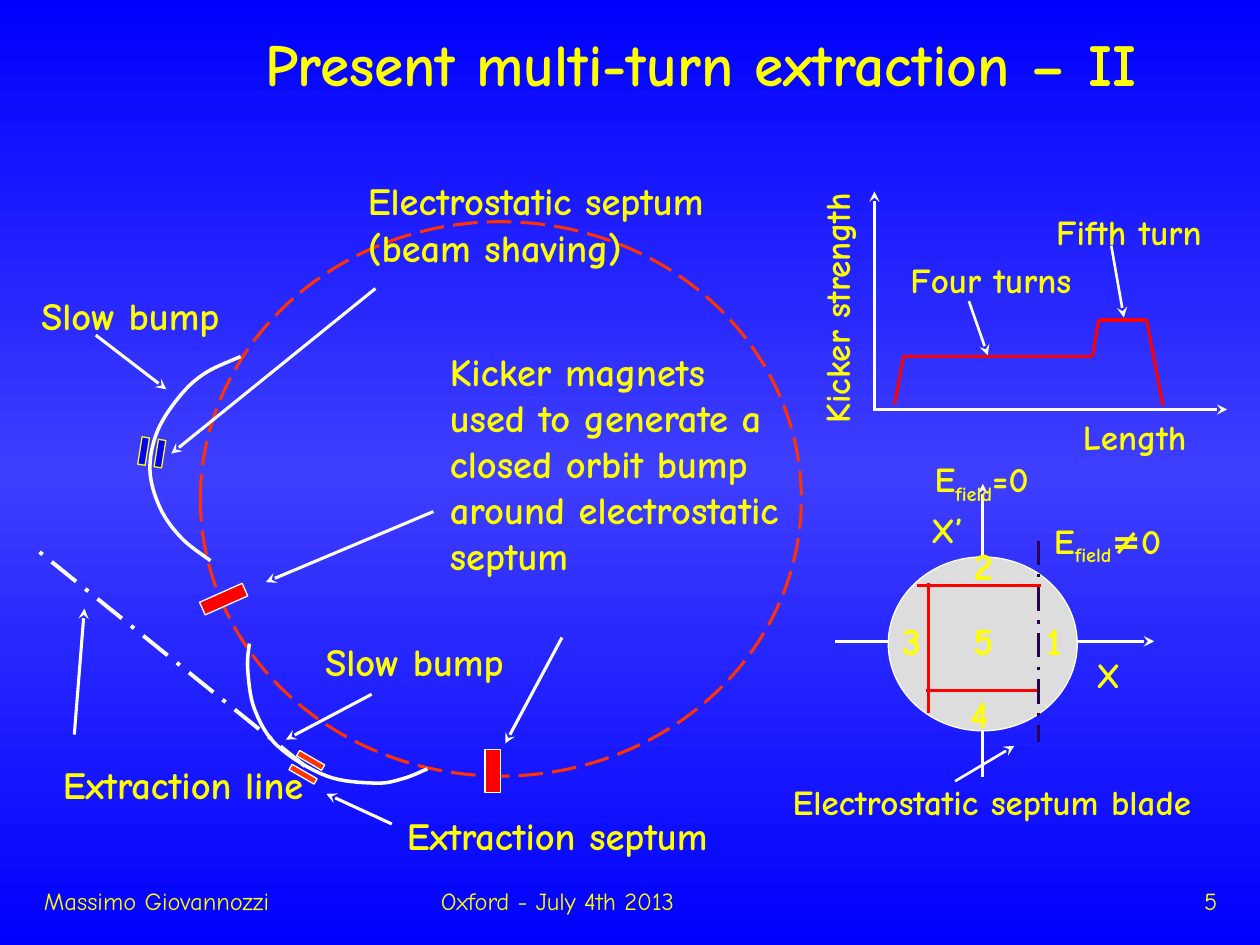
from copy import deepcopy
from itertools import pairwise

from lxml import etree
from pptx import Presentation
from pptx import util as u
from pptx.dml.color import RGBColor
from pptx.enum import dml, shapes, text
from pptx.oxml.ns import qn

THEME = {
    "font": "Comic Neue",
    "text": "FFFF00", "white": "FFFFFF", "red": "FF0000", "ring": "FF3300",
    "blue": "0000FF", "glow": "3E3EFF", "beam": "DDDDDD", "blade": "2A004E",
    "title": 34, "label": 22, "small": 20, "footer": 14,
    "thin": 0.75, "pointer": 1.5, "line": 1.75, "bump": 2, "exit": 2.25,
}
COLUMNS, ROWS = 100, 75
DASH = dml.MSO_LINE.LONG_DASH
DASH_DOT = dml.MSO_LINE.LONG_DASH_DOT
WIDE, TIGHT, NARROW, SLIM = (1, 0.5), (0, 0.5), (0.5, 0.5), (0, 0.1)

# All places are (column, row) or (column, row, columns, rows)
AXES = [((78, 61.7), (78, 38.4)), ((66.3, 50.9), (91.6, 50.9)),
        ((69.4, 32.5), (69.4, 15.2)), ((69.3, 32.5), (97.4, 32.5))]
KICKER_PULSE = [(71, 32.1), (71.7, 28.3), (86.7, 28.3), (87.2, 25.4),
                (91, 25.4), (92.3, 32.2)]
BEAM_SLICES = [((82.6, 46.5), (72.8, 46.5)), ((73.7, 46.3), (73.7, 56.6)),
               ((82.5, 54.8), (73.5, 54.8))]
SEPTUM_BLADE = ((82.4, 42.9), (82.4, 58.9))
EXTRACTION_LINE = ((24.2, 60.8), (2.5, 43.3))
BEAM = (70.5, 44.2, 15, 13.8)
RING = (15.9, 17.6, 47.7, 44)
SLOW_BUMPS = [  # points on the orbit, rotation
    ([(19.7, 51.2), (19.6, 53.2), (20.2, 56.4), (22.1, 59.3),
      (26, 61.6), (29.9, 62.1), (32.1, 61.7), (34, 60.9)], 1),
    ([(19.1, 28.3), (16.3, 29.6), (14.3, 31.4), (12.5, 34.2),
      (11.9, 37.3), (12.7, 40.3), (14.4, 42.7), (16.7, 44.5)], 0),
]
MAGNETS = [  # place, rotation, fill, outline
    ((12.4, 34.9, 0.6, 2.2), 9, "blue", "text"),
    ((11.1, 34.7, 0.6, 2.2), 9, "blue", "text"),
    ((23.8, 60.3, 0.5, 2.3), 120, "ring", "white"),
    ((24.4, 59.2, 0.5, 2.3), 120, "ring", "white"),
    ((38.5, 59.5, 1.2, 3.4), 0, "red", "white"),
    ((17.2, 45.7, 1.1, 3.7), 66, "red", "white"),
]
POINTERS = [  # label end, tip, weight
    ((76.9, 23.9), (78.4, 28.2), "pointer"),
    ((88.2, 19.5), (89.2, 25.2), "pointer"),
    ((75.8, 62), (80.5, 59.2), "pointer"),
    ((29.5, 55.1), (22.7, 58.7), "line"),
    ((7.6, 26.6), (13.2, 30.9), "line"),
    ((29.8, 22.9), (13.6, 36), "line"),
    ((31.1, 65.4), (25.9, 63), "line"),
    ((34.4, 40.6), (21.1, 46.2), "line"),
    ((44.6, 50.6), (40.1, 59), "line"),
    ((5.9, 58.3), (6.7, 48.3), "line"),
]
LABELS = [  # wording, place, size, alignment, anchor, (side, top) margins
    ("Present multi-turn extraction – II", (12.5, 0.8, 86.3, 8.3), "title", "CENTER", "MIDDLE", TIGHT),
    ("Massimo Giovannozzi", (2.5, 69, 20.8, 5), "footer", "LEFT", "MIDDLE", WIDE),
    ("Oxford - July 4th 2013", (34, 69, 31.7, 5), "footer", "LEFT", "MIDDLE", WIDE),
    ("5", (76.8, 69, 20.8, 5), "footer", "RIGHT", "MIDDLE", WIDE),
    ("Electrostatic septum blade", (62.9, 59.8, 35.5, 7.7), "small", "LEFT", "MIDDLE", TIGHT),
    ("Length", (83.8, 32.5, 12.5, 4.3), "small", "CENTER", "TOP", TIGHT),
    ("Four turns", (70, 20.5, 17.3, 3.4), "small", "CENTER", "MIDDLE", WIDE),
    ("Fifth turn", (82.5, 16.3, 14.2, 4.2), "small", "CENTER", "MIDDLE", TIGHT),
    ("X", (86, 51.4, 4.8, 4.3), "small", "LEFT", "TOP", WIDE),
    ("X’", (72.9, 39.9, 5.3, 4.3), "small", "LEFT", "TOP", WIDE),
    ("1", (82.2, 48.5, 2.9, 4.7), "label", "CENTER", "TOP", TIGHT),
    ("3", (70.5, 48.5, 3.7, 4.7), "label", "CENTER", "TOP", TIGHT),
    ("5", (76, 48.5, 4.1, 4.7), "label", "CENTER", "TOP", TIGHT),
    ("2", (76, 42.5, 4.1, 4.7), "label", "CENTER", "TOP", TIGHT),
    ("4", (76, 54.3, 3.4, 4.7), "label", "CENTER", "TOP", TIGHT),
    ("Slow bump", (25, 50.8, 15.8, 3.4), "label", "CENTER", "MIDDLE", TIGHT),
    ("Slow bump", (2.5, 22.5, 15.7, 5), "label", "CENTER", "MIDDLE", TIGHT),
    ("Electrostatic septum\n(beam shaving)", (29.2, 14, 30, 7.5), "label", "LEFT", "MIDDLE", TIGHT),
    ("Extraction septum", (32.3, 63.9, 27.7, 4.7), "label", "LEFT", "MIDDLE", TIGHT),
    ("Kicker magnets used to generate a closed orbit bump around electrostatic septum",
     (35.2, 27.1, 28.1, 22), "label", "LEFT", "TOP", NARROW),
    ("Extraction line", (4, 60.4, 21.2, 3.6), "label", "LEFT", "MIDDLE", WIDE),
]
KICKER_AXIS_LABEL = ("Kicker strength", (55.8, 21.3, 21.1, 3.5), "small", "LEFT", "TOP", SLIM)
FIELD_LABELS = [("=0", (70.8, 35.8, 14.2, 4.3)), ("≠0", (80.8, 40.7, 14.2, 4.3))]

prs = Presentation()
prs.slide_width, prs.slide_height = u.Inches(10), u.Inches(7.5)
CELL_W, CELL_H = prs.slide_width / COLUMNS, prs.slide_height / ROWS
slide = prs.slides.add_slide(prs.slide_layouts[6])


def grid(*cells):
    """Turn alternating columns and rows into slide lengths."""
    return [round(c * (CELL_H if i % 2 else CELL_W)) for i, c in enumerate(cells)]


def colour(name):
    return RGBColor.from_string(THEME[name])


def paint_background():
    fill = slide.background.fill
    fill.gradient()
    fill.gradient_angle = 90
    stop_list = slide._element.find(".//" + qn("a:gsLst"))
    stop_list.append(deepcopy(stop_list[-1]))
    for stop, name, position in zip(fill.gradient_stops, ("blue", "glow", "blue"), (0, 0.5, 1)):
        stop.color.rgb, stop.position = colour(name), position


def outline(part, name, weight, dash=None):
    part.line.color.rgb = colour(name)
    part.line.width = u.Pt(THEME[weight])
    if dash:
        part.line.dash_style = dash


def draw_line(start, end, name="white", weight="line", dash=None, arrow=False):
    line = slide.shapes.add_connector(shapes.MSO_CONNECTOR.STRAIGHT, *grid(*start, *end))
    outline(line, name, weight, dash)
    if arrow:
        etree.SubElement(line.line._get_or_add_ln(), qn("a:tailEnd"), type="stealth")
    etree.SubElement(line._element.spPr, qn("a:effectLst"))


def draw_shape(kind, place, fill, edge, weight="thin", rotation=0, dash=None):
    shape = slide.shapes.add_shape(kind, *grid(*place))
    shape.shadow.inherit = False
    shape.rotation = rotation
    if fill:
        shape.fill.solid()
        shape.fill.fore_color.rgb = colour(fill)
    else:
        shape.fill.background()
    outline(shape, edge, weight, dash)


def smooth_path(points, steps=8):
    """Catmull-Rom curve through the points."""
    padded = [points[0], *points, points[-1]]
    path = [points[0]]
    for a, b, c, d in zip(padded, padded[1:], padded[2:], padded[3:]):
        for t in (step / steps for step in range(1, steps + 1)):
            path.append(tuple(
                q + t / 2 * (r - p + t * (2 * p - 5 * q + 4 * r - s + t * (3 * (q - r) + s - p)))
                for p, q, r, s in zip(a, b, c, d)))
    return path


def draw_bump(points, rotation):
    first, *rest = [grid(*point) for point in smooth_path(points)]
    builder = slide.shapes.build_freeform(*first)
    builder.add_line_segments(rest, close=False)
    bump = builder.convert_to_shape()
    bump.shadow.inherit = False
    bump.fill.background()
    bump.rotation = rotation
    outline(bump, "white", "bump")


def style_run(run, size):
    run.font.name = THEME["font"]
    run.font.size = u.Pt(THEME[size])
    run.font.bold = size != "footer"
    run.font.color.rgb = colour("text")


def add_label(wording, place, size, align, anchor, margins):
    label = slide.shapes.add_textbox(*grid(*place))
    frame = label.text_frame
    frame.word_wrap = True
    frame.vertical_anchor = text.MSO_ANCHOR[anchor]
    side, top = grid(*margins)
    frame.margin_left = frame.margin_right = side
    frame.margin_top = frame.margin_bottom = top
    frame.text = wording
    for paragraph in frame.paragraphs:
        paragraph.alignment = text.PP_ALIGN[align]
        for run in paragraph.runs:
            style_run(run, size)
    return label


paint_background()
for start, tip in AXES:
    draw_line(start, tip, arrow=True)
draw_shape(shapes.MSO_SHAPE.OVAL, BEAM, "beam", "white")
draw_shape(shapes.MSO_SHAPE.OVAL, RING, None, "ring", "line", dash=DASH)
for start, end in [*pairwise(KICKER_PULSE), *BEAM_SLICES]:
    draw_line(start, end, "red")
draw_line(*SEPTUM_BLADE, "blade", dash=DASH_DOT)
for points, rotation in SLOW_BUMPS:
    draw_bump(points, rotation)
for place, rotation, fill, edge in MAGNETS:
    draw_shape(shapes.MSO_SHAPE.RECTANGLE, place, fill, edge, rotation=rotation)
draw_line(*EXTRACTION_LINE, weight="exit", dash=DASH_DOT)
for start, tip, weight in POINTERS:
    draw_line(start, tip, weight=weight, arrow=True)
for label in LABELS:
    add_label(*label)
add_label(*KICKER_AXIS_LABEL).rotation = 270
for value, place in FIELD_LABELS:
    paragraph = add_label("E", place, "small", "CENTER", "TOP", WIDE).text_frame.paragraphs[0]
    for wording in ("field", value):
        run = paragraph.add_run()
        run.text = wording
        style_run(run, "small")
    paragraph.runs[1]._r.get_or_add_rPr().set("baseline", "-25000")

prs.save("out.pptx")
